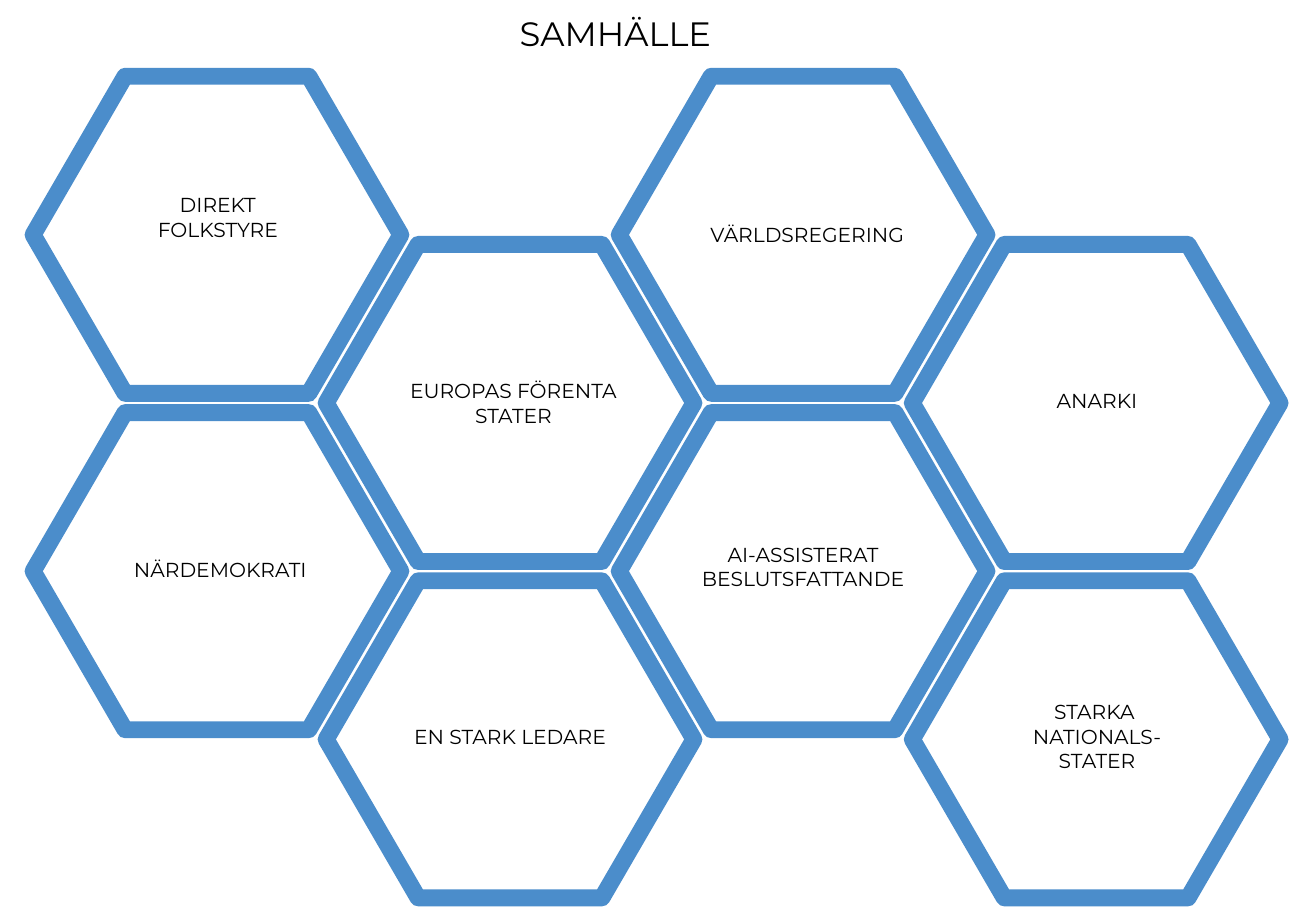
import copy
from dataclasses import dataclass

import lxml.etree
import pptx
import pptx.dml.color
import pptx.enum.shapes
import pptx.enum.text
import pptx.oxml.ns
import pptx.util
from pptx.util import Pt


@dataclass(frozen=True)
class Theme:
    font: str = "Montserrat"
    ink: str = "000000"
    outline: str = "4B8DCB"
    outline_width: float = 10
    heading_size: float = 20
    label_size: float = 12


@dataclass(frozen=True)
class Idea:
    """A hexagon at a column and row, its label shifted from the centre."""
    label: str
    column: int
    row: int
    shift_x: float = 0
    shift_y: float = 0
    label_width: float = 140


THEME = Theme()

HEX_WIDTH, HEX_HEIGHT = 218, 188
HEX_CORNER = 0.29
GRID_LEFT, GRID_TOP = 19.6, 45.2
COLUMN_STEP, ROW_STEP = 173.7, 199.4
LABEL_HEIGHT = 16.6

IDEAS = [
    Idea("DIREKT FOLKSTYRE", 0, 0, 0.5, -10.5, label_width=112),
    Idea("NÄRDEMOKRATI", 0, 1, 2, -1),
    Idea("EUROPAS FÖRENTA STATER", 1, 0, 2),
    Idea("EN STARK LEDARE", 1, 1, 0, -2),
    Idea("VÄRLDSREGERING", 2, 0, 2.5),
    Idea("AI-ASSISTERAT BESLUTSFATTANDE", 2, 1, 0, -3),
    Idea("ANARKI", 3, 0, 0.5, -1.5),
    Idea("STARKA \vNATIONALS-\vSTATER", 3, 1, 0.5, -2),
]


def add_text(slide, text: str, left: float, top: float, width: float, height: float, *,
             size: float, align=pptx.enum.text.PP_ALIGN.LEFT,
             anchor=pptx.enum.text.MSO_ANCHOR.TOP) -> None:
    """Add a text box without margins; a vertical tab in the text breaks the line."""
    frame = slide.shapes.add_textbox(Pt(left), Pt(top), Pt(width), Pt(height)).text_frame
    frame.margin_left = frame.margin_top = frame.margin_right = frame.margin_bottom = 0
    frame.word_wrap = True
    frame.vertical_anchor = anchor
    paragraph = frame.paragraphs[0]
    paragraph.text = text
    paragraph.alignment = align
    for run in paragraph.runs:
        run.font.name = THEME.font
        run.font.size = Pt(size)
        run.font.color.rgb = pptx.dml.color.RGBColor.from_string(THEME.ink)
    # Line breaks need the run format too, or they take the default text size.
    for line_break in paragraph._p.findall(pptx.oxml.ns.qn("a:br")):
        line_break.insert(0, copy.deepcopy(paragraph.runs[0]._r.rPr))


def add_hexagon(slide, left: float, top: float) -> None:
    hexagon = slide.shapes.add_shape(
        pptx.enum.shapes.MSO_SHAPE.HEXAGON,
        Pt(left), Pt(top), Pt(HEX_WIDTH), Pt(HEX_HEIGHT))
    hexagon.adjustments[0] = HEX_CORNER
    hexagon.shadow.inherit = False
    hexagon.fill.background()
    hexagon.line.color.rgb = pptx.dml.color.RGBColor.from_string(THEME.outline)
    hexagon.line.width = Pt(THEME.outline_width)
    outline = hexagon._element.spPr.find(pptx.oxml.ns.qn("a:ln"))
    lxml.etree.SubElement(outline, pptx.oxml.ns.qn("a:round"))


def add_idea(slide, idea: Idea) -> None:
    """Draw one hexagon with its label; odd columns sit half a row lower."""
    left = GRID_LEFT + idea.column * COLUMN_STEP
    top = GRID_TOP + (idea.row + idea.column % 2 / 2) * ROW_STEP
    add_hexagon(slide, left, top)
    add_text(slide, idea.label,
             left + (HEX_WIDTH - idea.label_width) / 2 + idea.shift_x,
             top + (HEX_HEIGHT - LABEL_HEIGHT) / 2 + idea.shift_y,
             idea.label_width, LABEL_HEIGHT, size=THEME.label_size,
             align=pptx.enum.text.PP_ALIGN.CENTER,
             anchor=pptx.enum.text.MSO_ANCHOR.MIDDLE)


def main() -> None:
    presentation = pptx.Presentation()
    presentation.slide_width, presentation.slide_height = Pt(780), Pt(540)
    slide = presentation.slides.add_slide(presentation.slide_layouts[6])
    for idea in IDEAS:
        add_idea(slide, idea)
    add_text(slide, "SAMHÄLLE", 308, 7.4, 163.4, 24.5, size=THEME.heading_size)
    presentation.save("out.pptx")


if __name__ == "__main__":
    main()
